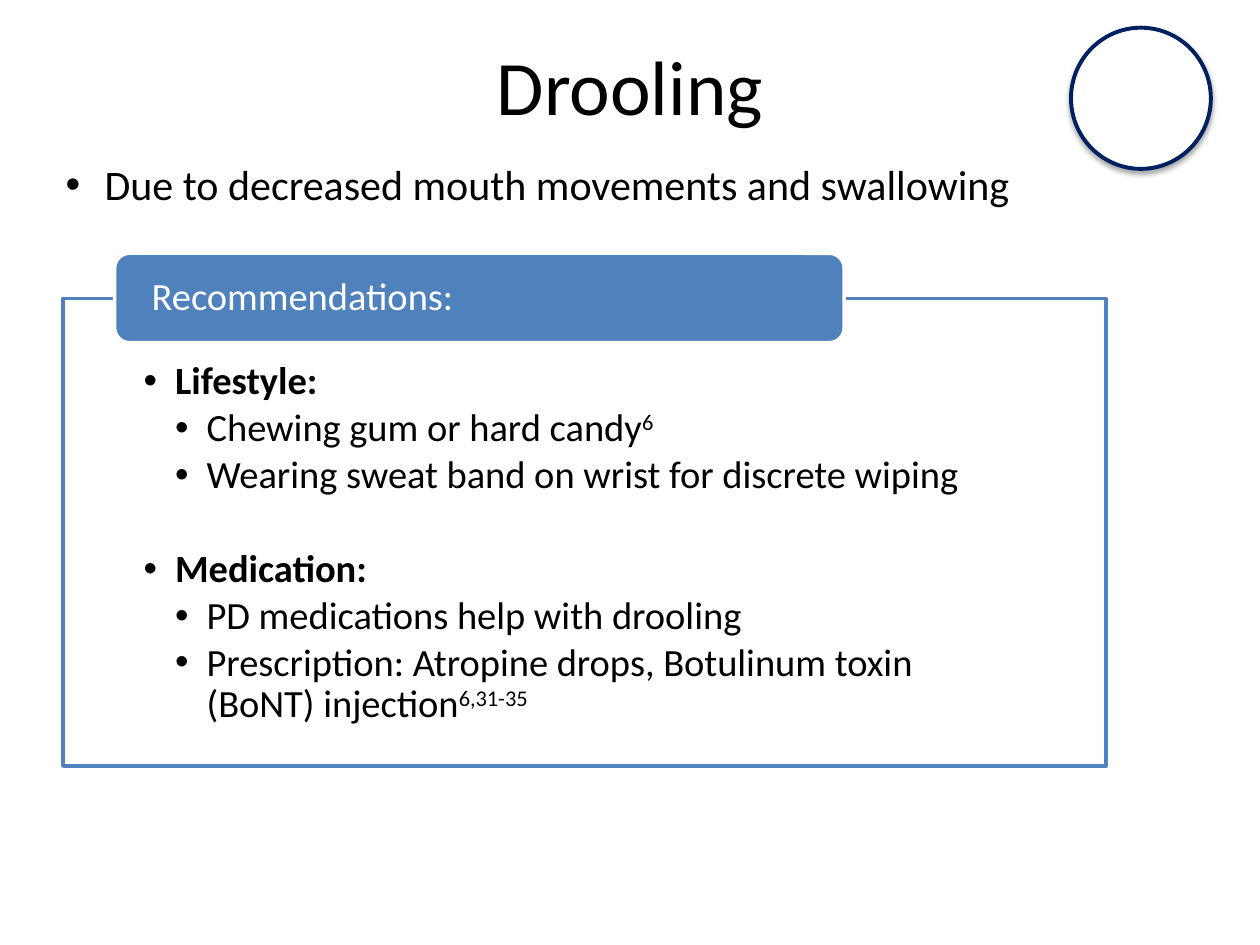
from lxml import etree
from pptx import Presentation
from pptx.dml.color import RGBColor
from pptx.enum.shapes import MSO_SHAPE
from pptx.enum.text import MSO_ANCHOR, MSO_AUTO_SIZE, PP_ALIGN
from pptx.oxml.ns import qn
from pptx.util import Inches, Pt

OVAL, RECTANGLE, ROUNDED = MSO_SHAPE.OVAL, MSO_SHAPE.RECTANGLE, MSO_SHAPE.ROUNDED_RECTANGLE
TOP, MIDDLE = MSO_ANCHOR.TOP, MSO_ANCHOR.MIDDLE
LEFT, CENTER = PP_ALIGN.LEFT, PP_ALIGN.CENTER
NO_AUTOFIT = MSO_AUTO_SIZE.NONE

BLACK = RGBColor(0x00, 0x00, 0x00)
WHITE = RGBColor(0xFF, 0xFF, 0xFF)
NAVY = RGBColor(0x00, 0x20, 0x60)
BLUE = RGBColor(0x4F, 0x81, 0xBD)

FONT = "Calibri"
ADVICE = [
    ("Lifestyle:", [
        ("Chewing gum or hard candy", "6"),
        ("Wearing sweat band on wrist for discrete wiping", ""),
    ]),
    ("Medication:", [
        ("PD medications help with drooling", ""),
        ("Prescription: Atropine drops, Botulinum toxin (BoNT) injection", "6,31-35"),
    ]),
]


def place(shape, left, top, width, height):
    shape.left, shape.top = Inches(left), Inches(top)
    shape.width, shape.height = Inches(width), Inches(height)


def style(paragraph, size, color=BLACK, align=LEFT, bold=False):
    paragraph.alignment = align
    paragraph.font.name = FONT
    paragraph.font.size = Pt(size)
    paragraph.font.bold = bold
    paragraph.font.color.rgb = color


def add_bullet(paragraph, margin, hanging):
    properties = paragraph._p.get_or_add_pPr()
    properties.set("marL", str(Inches(margin)))
    properties.set("indent", str(-Inches(hanging)))
    bullet_font = etree.Element(qn("a:buFont"), typeface="Arial")
    bullet = etree.Element(qn("a:buChar"), char="•")
    defaults = properties.find(qn("a:defRPr"))
    if defaults is None:
        properties.extend([bullet_font, bullet])
    else:
        defaults.addprevious(bullet_font)
        defaults.addprevious(bullet)


def add_panel(slide, kind, box, fill, line, line_width):
    panel = slide.shapes.add_shape(kind, *map(Inches, box))
    panel.shadow.inherit = False
    panel.fill.solid()
    panel.fill.fore_color.rgb = fill
    panel.line.color.rgb = line
    panel.line.width = Pt(line_width)
    return panel


def set_frame(shape, anchor, side, top=0, bottom=0):
    frame = shape.text_frame
    frame.word_wrap = True
    frame.vertical_anchor = anchor
    frame.margin_left = frame.margin_right = Inches(side)
    frame.margin_top, frame.margin_bottom = Inches(top), Inches(bottom)
    return frame


def add_soft_shadow(shape):
    effects = shape._element.spPr.find(qn("a:effectLst"))
    shadow = etree.SubElement(effects, qn("a:outerShdw"), blurRad=str(Pt(3.1)),
                              dist=str(Pt(1.8)), dir="5400000", rotWithShape="0")
    color = etree.SubElement(shadow, qn("a:srgbClr"), val=str(BLACK))
    etree.SubElement(color, qn("a:alpha"), val="35000")


def write_heading(slide):
    title = slide.shapes.title
    place(title, 0.5, 0.05, 9, 1.25)
    title.text_frame.text = "Drooling"
    title.text_frame.vertical_anchor = MIDDLE
    style(title.text_frame.paragraphs[0], 44, align=CENTER)


def write_cause(slide):
    cause = slide.placeholders[1]
    place(cause, 0.42, 1.21, 8.78, 0.81)
    cause.text_frame.text = "Due to decreased mouth movements and swallowing"
    cause.text_frame.auto_size = NO_AUTOFIT
    paragraph = cause.text_frame.paragraphs[0]
    paragraph.space_before = Pt(0)
    style(paragraph, 24)
    add_bullet(paragraph, 0.31, 0.31)


def add_advice_line(frame, text, level, reference="", gap=0):
    first = frame.paragraphs[0]
    paragraph = frame.add_paragraph() if first.runs else first
    paragraph.level = level
    paragraph.line_spacing = 0.9
    paragraph.space_before, paragraph.space_after = Pt(gap), Pt(3)
    style(paragraph, 22, bold=level == 1)
    add_bullet(paragraph, 0.25 * level, 0.25)
    paragraph.add_run().text = text
    if reference:
        citation = paragraph.add_run()
        citation.text = reference
        citation._r.get_or_add_rPr().set("baseline", "30000")


def add_recommendations(slide):
    advice = add_panel(slide, RECTANGLE, (0.5, 2.37, 8.28, 3.71), WHITE, BLUE, 2)
    frame = set_frame(advice, TOP, 0.64, 0.5, 0.17)
    for index, (topic, measures) in enumerate(ADVICE):
        add_advice_line(frame, topic, 1, gap=27 * index)
        for measure, reference in measures:
            add_advice_line(frame, measure, 2, reference)

    label = add_panel(slide, ROUNDED, (0.91, 2.01, 5.79, 0.71), BLUE, WHITE, 2)
    paragraph = set_frame(label, MIDDLE, 0.26).paragraphs[0]
    paragraph.text = "Recommendations:"
    paragraph.line_spacing = 0.9
    style(paragraph, 22, WHITE)


def main():
    presentation = Presentation()
    presentation.slide_width, presentation.slide_height = Inches(10), Inches(7.5)
    slide = presentation.slides.add_slide(presentation.slide_layouts[1])
    badge = add_panel(slide, OVAL, (8.5, 0.22, 1.11, 1.12), WHITE, NAVY, 2.25)
    add_soft_shadow(badge)
    write_heading(slide)
    add_recommendations(slide)
    write_cause(slide)
    presentation.save("out.pptx")


if __name__ == "__main__":
    main()
